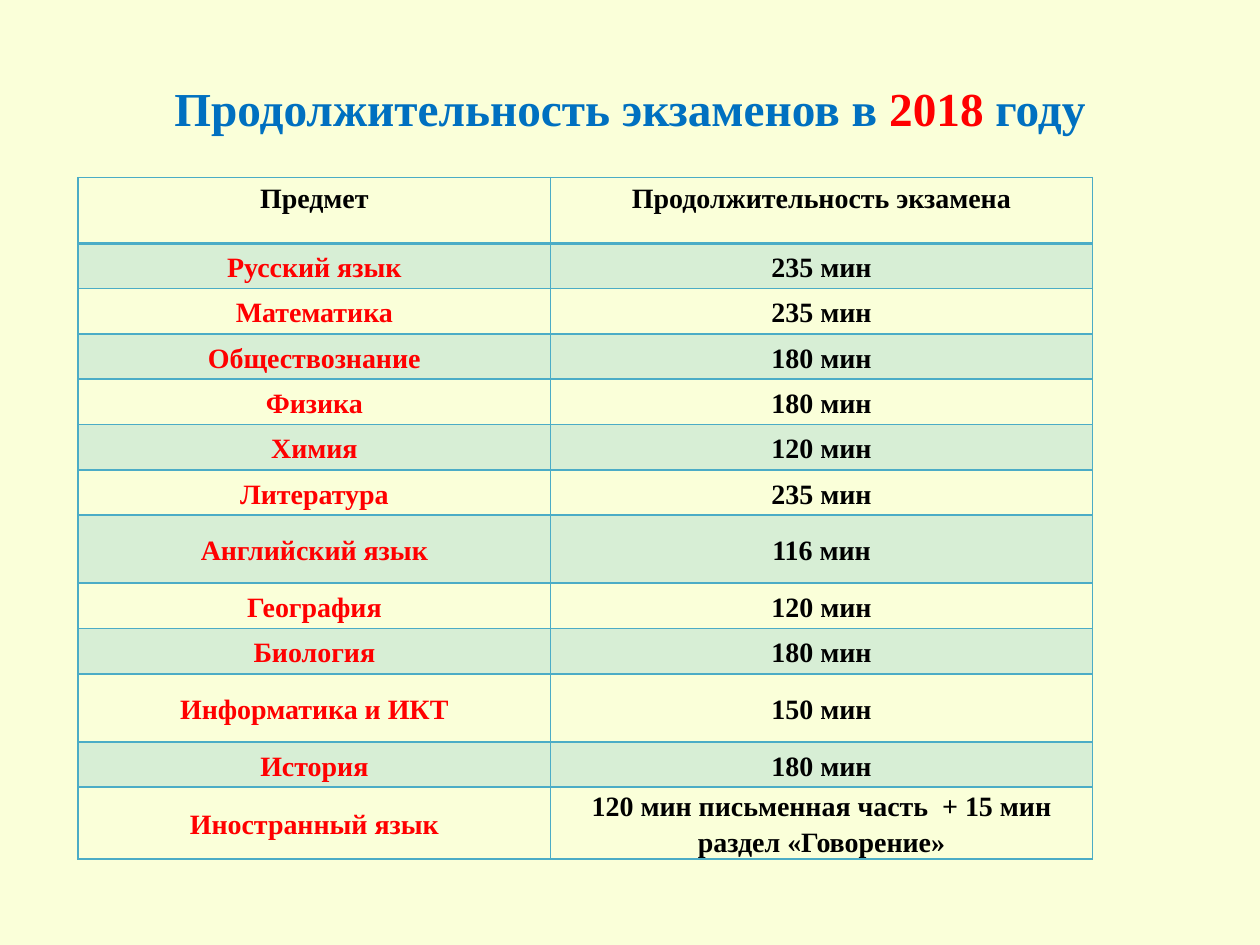
"""Build a slide with a table of exam durations."""
from typing import NamedTuple

from lxml import etree
from pptx import Presentation
from pptx.dml.color import RGBColor
from pptx.enum.text import MSO_ANCHOR, PP_ALIGN
from pptx.oxml.ns import qn
from pptx.util import Inches, Pt

CENTER = PP_ALIGN.CENTER
MIDDLE = MSO_ANCHOR.MIDDLE
TOP = MSO_ANCHOR.TOP
FONT = "Times New Roman"
CREAM = RGBColor(0xFA, 0xFF, 0xD9)
BLUE = RGBColor(0x00, 0x70, 0xC0)
RED = RGBColor(0xFF, 0x00, 0x00)
BLACK = RGBColor(0x00, 0x00, 0x00)
TEAL = RGBColor(0x4B, 0xAC, 0xC6)
BAND_ALPHA = "20000"
COLUMN_WIDTHS = (3.75, 4.3)
HEADER_HEIGHT = 0.52
LOW, HIGH = 0.36, 0.54


class Exam(NamedTuple):
    subject: str
    duration: str
    height: float = LOW


HEADER = Exam("Предмет", "Продолжительность экзамена", HEADER_HEIGHT)
EXAMS = (
    Exam("Русский язык", "235 мин"),
    Exam("Математика", "235 мин"),
    Exam("Обществознание", "180 мин"),
    Exam("Физика", "180 мин"),
    Exam("Химия", "120 мин"),
    Exam("Литература", "235 мин"),
    Exam("Английский язык", "116 мин", HIGH),
    Exam("География", "120 мин"),
    Exam("Биология", "180 мин"),
    Exam("Информатика и ИКТ", "150 мин", HIGH),
    Exam("История", "180 мин"),
    Exam("Иностранный язык", "120 мин письменная часть  + 15 мин раздел «Говорение»"),
)


def add_span(para, text: str, size: float, color: RGBColor) -> None:
    """Add one bold run to a paragraph."""
    span = para.add_run()
    span.text = text
    span.font.name = FONT
    span.font.size = Pt(size)
    span.font.bold = True
    span.font.color.rgb = color


def set_borders(cell, bottom: float) -> None:
    """Outline a cell, with its own width for the bottom line."""
    properties = cell._tc.get_or_add_tcPr()
    widths = {"a:lnL": 1, "a:lnR": 1, "a:lnT": 1, "a:lnB": bottom}
    for position, (tag, width) in enumerate(widths.items()):
        line = etree.Element(qn(tag), w=str(Pt(width)))
        fill = etree.SubElement(line, qn("a:solidFill"))
        etree.SubElement(fill, qn("a:srgbClr"), val=str(TEAL))
        properties.insert(position, line)


def set_band(cell, banded: bool) -> None:
    """Give a cell a translucent fill, or none."""
    if not banded:
        cell.fill.background()
        return
    cell.fill.solid()
    cell.fill.fore_color.rgb = TEAL
    color = cell._tc.tcPr.find(qn("a:solidFill")).find(qn("a:srgbClr"))
    etree.SubElement(color, qn("a:alpha"), val=BAND_ALPHA)


def fill_row(table, index: int, exam: Exam) -> None:
    """Write and format one table row."""
    is_header = index == 0
    table.rows[index].height = Inches(exam.height)
    texts = ((exam.subject, BLACK if is_header else RED), (exam.duration, BLACK))
    for column, (text, color) in enumerate(texts):
        cell = table.cell(index, column)
        para = cell.text_frame.paragraphs[0]
        para.alignment = CENTER
        cell.vertical_anchor = TOP if is_header else MIDDLE
        if not is_header:
            cell.margin_left = cell.margin_right = Inches(0.07)
            cell.margin_top = cell.margin_bottom = 0
            para.line_spacing = 1.15
            para.space_before = para.space_after = Pt(6)
        add_span(para, text, 16, color)
        set_band(cell, index % 2 == 1)
        set_borders(cell, 2 if is_header or index == 1 and False else 1)


def add_title(page) -> None:
    """Place and write the slide title."""
    box = page.shapes.title
    box.left, box.top = Inches(0.5), Inches(0.3)
    box.width, box.height = Inches(9), Inches(1.11)
    box.text_frame.vertical_anchor = MIDDLE
    para = box.text_frame.paragraphs[0]
    para.alignment = CENTER
    add_span(para, "Продолжительность экзаменов в ", 27, BLUE)
    add_span(para, "2018 ", 27, RED)
    add_span(para, "году", 27, BLUE)


def add_exam_table(page) -> None:
    """Add the table with its header and all exams."""
    rows = (HEADER, *EXAMS)
    table = page.shapes.add_table(
        len(rows), len(COLUMN_WIDTHS), Inches(0.62), Inches(1.41),
        Inches(sum(COLUMN_WIDTHS)), Inches(sum(row.height for row in rows)),
    ).table
    table.first_row = table.horz_banding = False
    for column, width in zip(table.columns, COLUMN_WIDTHS):
        column.width = Inches(width)
    for index, exam in enumerate(rows):
        fill_row(table, index, exam)


def main() -> None:
    """Create the deck and save it."""
    deck = Presentation()
    deck.slide_width, deck.slide_height = Inches(10), Inches(7.5)
    page = deck.slides.add_slide(deck.slide_layouts.get_by_name("Title Only"))
    page.background.fill.solid()
    page.background.fill.fore_color.rgb = CREAM
    add_title(page)
    add_exam_table(page)
    deck.save("out.pptx")


if __name__ == "__main__":
    main()
